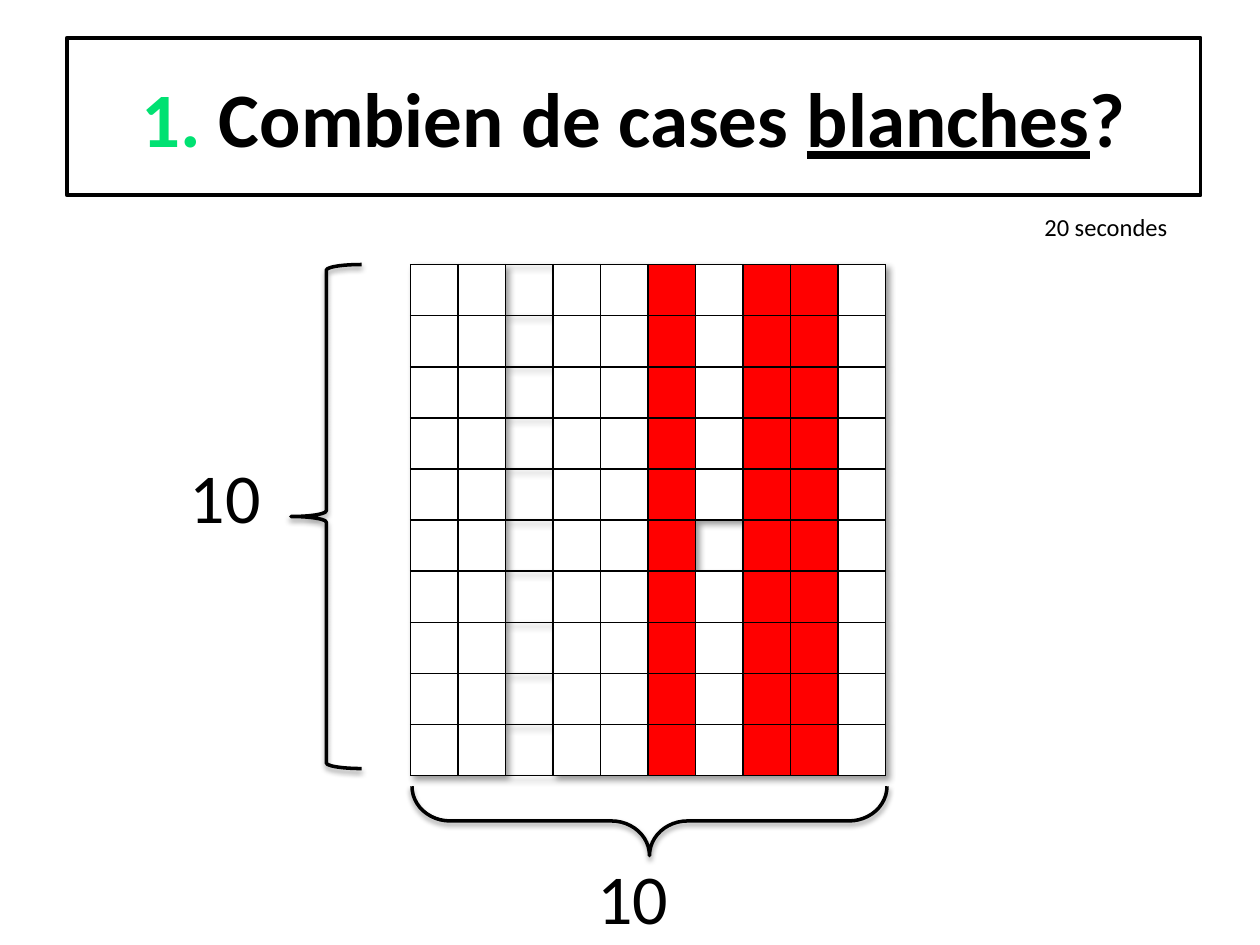
from lxml.etree import SubElement
from pptx import Presentation
from pptx.dml.color import RGBColor
from pptx.enum.shapes import MSO_SHAPE as Shape
from pptx.enum.text import MSO_ANCHOR as Anchor, MSO_AUTO_SIZE as AutoSize, PP_ALIGN as Align
from pptx.oxml import parse_xml
from pptx.oxml.ns import nsdecls, qn
from pptx.util import Inches, Pt

color = RGBColor.from_string
BLACK, WHITE, RED, GREEN = "000000", "FFFFFF", "FF0000", "00E172"


def write(paragraph, text, size=40, ink=BLACK, bold=False, underline=False):
    run = paragraph.add_run()
    run.text = text
    run.font.name = "Calibri"
    run.font.size = Pt(size)
    run.font.bold = bold
    run.font.underline = underline
    run.font.color.rgb = color(ink)


def shadow_effect(blur, distance, angle, opacity):
    return parse_xml(
        f'<a:effectLst {nsdecls("a")}><a:outerShdw blurRad="{Pt(blur)}" dist="{Pt(distance)}" '
        f'dir="{angle * 60000}" algn="tl" rotWithShape="0"><a:srgbClr val="{BLACK}">'
        f'<a:alpha val="{opacity * 1000}"/></a:srgbClr></a:outerShdw></a:effectLst>')


deck = Presentation()
deck.slide_width, deck.slide_height = Inches(10), Inches(7.5)
slide = deck.slides.add_slide(deck.slide_layouts[5])
shapes = slide.shapes

question = shapes.title
question.left, question.top = Inches(0.53), Inches(0.3)
question.width, question.height = Inches(9), Inches(1.25)
question.fill.solid()
question.fill.fore_color.rgb = color(WHITE)
question.line.color.rgb = color(BLACK)
question.line.width = Pt(2)
question.text_frame.vertical_anchor = Anchor.MIDDLE
wording = question.text_frame.paragraphs[0]
wording.alignment = Align.CENTER
write(wording, "1.", size=44, ink=GREEN, bold=True)
write(wording, " Combien de cases ", size=44, bold=True)
write(wording, "blanches", size=44, bold=True, underline=True)
write(wording, "?", size=44, bold=True)

COUNT = 10
grid_left, grid_top = Inches(3.26), Inches(2.1)
grid_width, grid_height = Inches(3.77), Inches(4)
grid = shapes.add_table(COUNT, COUNT, grid_left, grid_top, grid_width, grid_height).table
grid.first_row = grid.horz_banding = False
grid._tbl.tblPr.insert(0, shadow_effect(4, 3, 45, 40))
red_columns = {5, 7, 8}
for row in range(COUNT):
    for column in range(COUNT):
        square = grid.cell(row, column)
        borders = square._tc.get_or_add_tcPr()
        for side in ("a:lnL", "a:lnR", "a:lnT", "a:lnB"):
            border = SubElement(borders, qn(side), w=str(Pt(1)))
            SubElement(SubElement(border, qn("a:solidFill")), qn("a:srgbClr"), val=BLACK)
        if column == 2 or (row, column) == (5, 6):
            square.fill.background()
        else:
            square.fill.solid()
            square.fill.fore_color.rgb = color(RED if column in red_columns else WHITE)

for left, top, width, height, turn, curl in (
    (2.31, 2.1, 0.56, 4, 0, 0.08),
    (4.88, 4.63, 0.55, 3.77, 270, 0.55),
):
    brace = shapes.add_shape(Shape.LEFT_BRACE, Inches(left), Inches(top), Inches(width), Inches(height))
    brace.rotation = turn
    brace.adjustments[0] = curl
    brace.fill.background()
    brace.line.color.rgb = color(BLACK)
    brace.line.width = Pt(2)
    brace._element.spPr.append(shadow_effect(3.1, 1.6, 90, 38))

for text, left, top, width, height, size, wrap in (
    ("10", 1.41, 3.55, 0.77, 0.77, 40, False),
    ("10", 4.64, 6.73, 0.77, 0.77, 40, False),
    ("20 secondes", 8.19, 1.63, 1.21, 0.34, 14, True),
):
    label = shapes.add_textbox(Inches(left), Inches(top), Inches(width), Inches(height)).text_frame
    label.word_wrap = wrap
    label.auto_size = AutoSize.SHAPE_TO_FIT_TEXT
    write(label.paragraphs[0], text, size=size)

deck.save("out.pptx")
